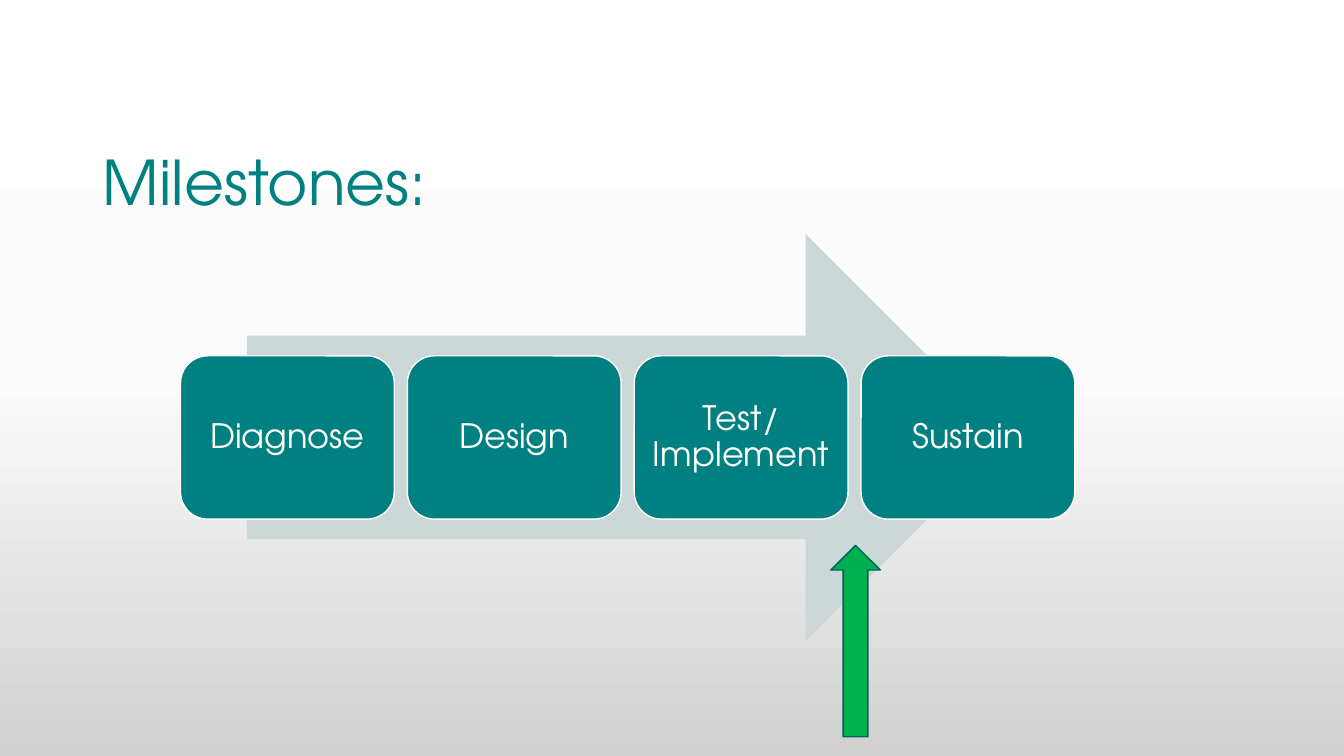
from copy import deepcopy
from dataclasses import dataclass

from pptx import Presentation
from pptx.dml.color import RGBColor
from pptx.enum.shapes import MSO_SHAPE as Shape
from pptx.enum.text import MSO_ANCHOR as Anchor, PP_ALIGN as Align
from pptx.oxml.ns import qn
from pptx.util import Inches, Pt


@dataclass(frozen=True)
class Theme:
    font: str = "TeX Gyre Adventor"
    title_size: int = 44
    step_size: int = 24
    teal: str = "008080"
    dark_teal: str = "005F5F"
    pale_teal: str = "CCD8D8"
    green: str = "00B050"
    white: str = "FFFFFF"
    background: tuple = ((0, "FFFFFF"), (0.5, "FBFBFB"), (1, "D1D1D1"))


theme = Theme()


def add_box(kind, left, top, width, height, fill, line=None):
    shape = slide.shapes.add_shape(
        kind, Inches(left), Inches(top), Inches(width), Inches(height))
    shape.shadow.inherit = False
    shape.fill.solid()
    shape.fill.fore_color.rgb = RGBColor.from_string(fill)
    if line:
        shape.line.color.rgb = RGBColor.from_string(line)
        shape.line.width = Pt(1)
    else:
        shape.line.fill.background()
    return shape


def write_text(shape, text, size, color, alignment):
    frame = shape.text_frame
    frame.text = text
    frame.word_wrap = True
    frame.vertical_anchor = Anchor.MIDDLE
    paragraph = frame.paragraphs[0]
    paragraph.alignment = alignment
    paragraph.line_spacing = 0.9
    paragraph.space_before = Pt(0)
    font = paragraph.runs[0].font
    font.name = theme.font
    font.size = Pt(size)
    font.color.rgb = RGBColor.from_string(color)


presentation = Presentation()
presentation.slide_width = Inches(13.33)
presentation.slide_height = Inches(7.5)
slide = presentation.slides.add_slide(presentation.slide_layouts[5])

# Background: three gradient stops running from top to bottom
background = slide.background.fill
background.gradient()
background.gradient_angle = 270
stop_list = slide.element.find(".//" + qn("a:gsLst"))
stop_list.insert(1, deepcopy(stop_list[0]))
for stop, (position, color) in zip(background.gradient_stops, theme.background):
    stop.position = position
    stop.color.rgb = RGBColor.from_string(color)

# Title
title = slide.shapes.title
title.left, title.top = Inches(0.92), Inches(1.17)
title.width, title.height = Inches(11.5), Inches(1.35)
write_text(title, "Milestones:", theme.title_size, theme.teal, Align.LEFT)

# Process arrow with the four milestones on it
add_box(Shape.RIGHT_ARROW, 2.45, 2.32, 7.56, 4.04, theme.pale_teal)
for index, name in enumerate(["Diagnose", "Design", "Test/ Implement", "Sustain"]):
    step = add_box(Shape.ROUNDED_RECTANGLE, 1.79 + 2.25 * index, 3.53, 2.12, 1.62,
                   theme.teal, theme.white)
    frame = step.text_frame
    frame.margin_left = frame.margin_right = Inches(0.1)
    frame.margin_top = frame.margin_bottom = Inches(0.1)
    write_text(step, name, theme.step_size, theme.white, Align.CENTER)

# Marker for the current position
add_box(Shape.UP_ARROW, 8.24, 5.41, 0.49, 1.9, theme.green, theme.dark_teal)

presentation.save("out.pptx")
